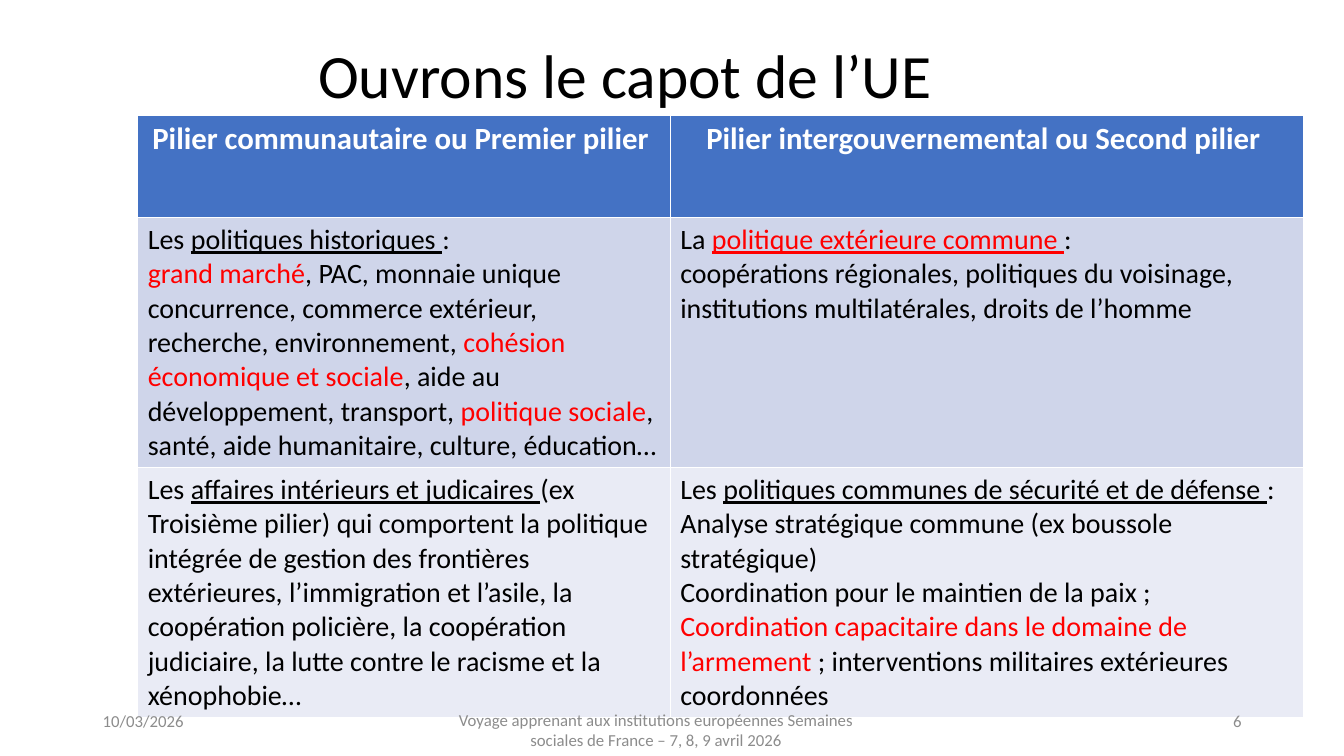
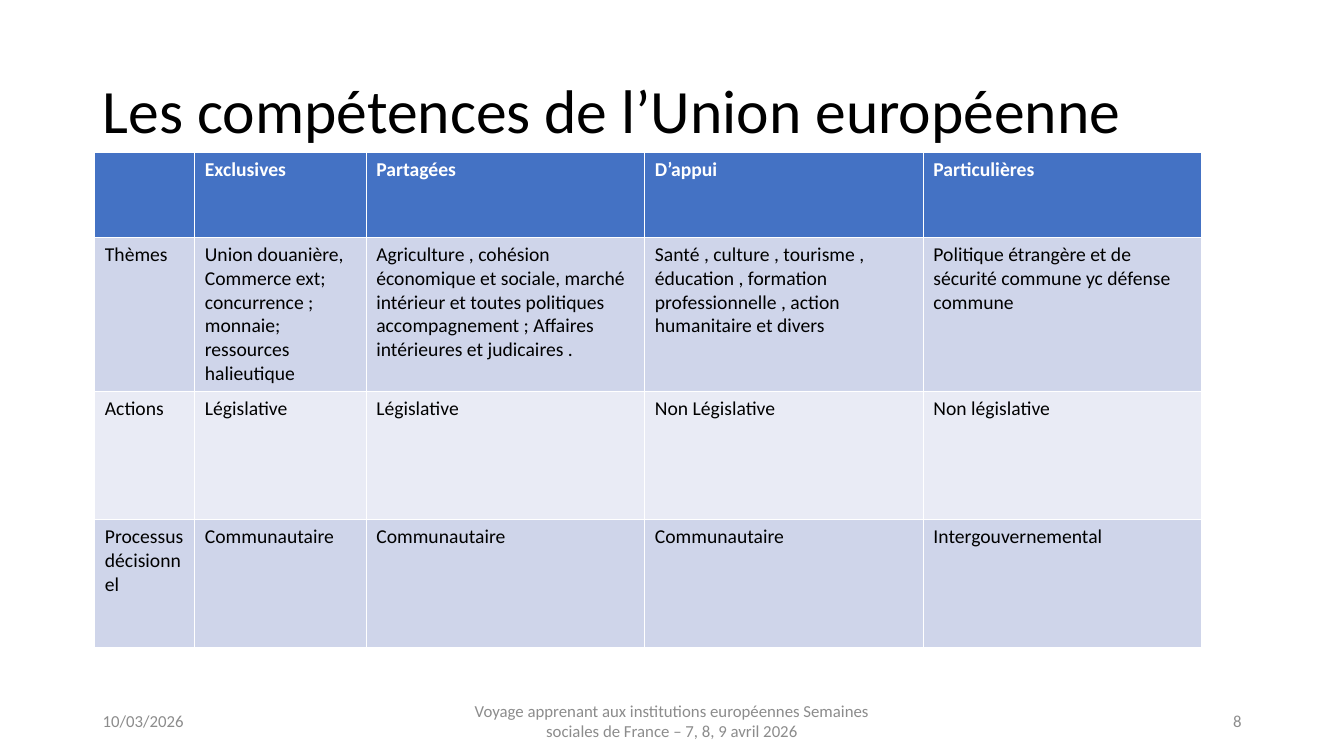
import pptx
import pptx.dml.color
import pptx.enum.text
import pptx.util

Cm = pptx.util.Cm
Pt = pptx.util.Pt
ALIGN = pptx.enum.text.PP_ALIGN
ANCHOR = pptx.enum.text.MSO_ANCHOR

FONT = "Calibri"
COLORS = {
    "black": "000000",
    "white": "FFFFFF",
    "red": "FF0000",
    "grey": "8C8C8C",
    "header": "4472C4",
    "band_dark": "CFD5EA",
    "band_light": "E9EBF5",
}
DATE = "10/03/2026"
EVENT = ("Voyage apprenant aux institutions européennes Semaines sociales "
         "de France – 7, 8, 9 avril 2026")
RED = {"color": "red"}
UNDERLINED = {"underline": True}


def rgb(name):
    return pptx.dml.color.RGBColor.from_string(COLORS[name])


def add_run(p, text, size=12, color="black", bold=False, underline=False):
    r = p.add_run()
    r.text = text
    r.font.name = FONT
    r.font.size = Pt(size)
    r.font.color.rgb = rgb(color)
    r.font.bold = bold
    r.font.underline = underline


class Deck:
    def __init__(self):
        self.prs = pptx.Presentation()
        self.prs.slide_width = Cm(33.87)
        self.prs.slide_height = Cm(19.05)
        self.s = None

    def new_slide(self):
        self.s = self.prs.slides.add_slide(self.prs.slide_layouts[6])

    def text(self, text, left, top, width, height, align=ALIGN.LEFT, spacing=1.0, **fmt):
        sp = self.s.shapes.add_textbox(Cm(left), Cm(top), Cm(width), Cm(height))
        tf = sp.text_frame
        tf.word_wrap = True
        tf.vertical_anchor = ANCHOR.MIDDLE
        p = tf.paragraphs[0]
        p.alignment = align
        p.line_spacing = spacing
        add_run(p, text, **fmt)

    def title(self, text, left=2.34, top=1.02, width=29.21):
        self.text(text, left, top, width, 3.68, spacing=0.9, size=44)

    def footer(self, number, event_left=11.22, event_top=17.65):
        self.text(DATE, 2.34, 17.65, 7.62, 1.01, color="grey")
        self.text(EVENT, event_left, event_top, 11.43, 1.01, ALIGN.CENTER, color="grey")
        self.text(number, 23.92, 17.65, 7.62, 1.01, ALIGN.RIGHT, color="grey")

    def cell(self, cell, paragraphs, fill, align, **base):
        cell.fill.solid()
        cell.fill.fore_color.rgb = rgb(fill)
        tf = cell.text_frame
        for i, runs in enumerate(paragraphs):
            p = tf.add_paragraph() if i else tf.paragraphs[0]
            p.alignment = align
            for text, fmt in runs:
                add_run(p, text, **{**base, **fmt})

    def table(self, left, top, widths, heights, rows, size, header_size, header_align=ALIGN.LEFT):
        table = self.s.shapes.add_table(
            len(heights), len(widths), Cm(left), Cm(top), Cm(sum(widths)), Cm(sum(heights))
        ).table
        for column, width in zip(table.columns, widths):
            column.width = Cm(width)
        for i, (row, height, contents) in enumerate(zip(table.rows, heights, rows)):
            row.height = Cm(height)
            for cell, content in zip(row.cells, contents):
                paragraphs = [[(content, {})]] if isinstance(content, str) else content
                if i == 0:
                    self.cell(cell, paragraphs, "header", header_align,
                              size=header_size, color="white", bold=True)
                else:
                    band = "band_dark" if i % 2 else "band_light"
                    self.cell(cell, paragraphs, band, ALIGN.LEFT, size=size)


PILLARS = [
    ["Pilier communautaire ou Premier pilier ", "Pilier intergouvernemental ou Second pilier "],
    [
        [
            [("Les ", {}), ("politiques historiques ", UNDERLINED), (":", {})],
            [
                ("grand marché", RED),
                (", PAC, monnaie unique concurrence, commerce extérieur, recherche, "
                 "environnement, ", {}),
                ("cohésion économique et sociale", RED),
                (", aide au développement, transport, ", {}),
                ("politique sociale", RED),
                (", santé, aide humanitaire, culture, éducation…", {}),
            ],
        ],
        [
            [("La ", {}), ("politique extérieure commune ", {**RED, **UNDERLINED}), (":", {})],
            [("coopérations régionales, politiques du voisinage, institutions "
              "multilatérales, droits de l’homme", {})],
        ],
    ],
    [
        [
            [
                ("Les ", {}),
                ("affaires intérieurs et judicaires ", UNDERLINED),
                ("(ex Troisième pilier) qui comportent la politique intégrée de gestion "
                 "des frontières extérieures, l’immigration et l’asile, la coopération "
                 "policière, la coopération judiciaire, la lutte contre le racisme et la "
                 "xénophobie…", {}),
            ],
        ],
        [
            [("Les ", {}), ("politiques communes de sécurité et de défense ", UNDERLINED),
             (":", {})],
            [("Analyse stratégique commune (ex boussole stratégique)", {})],
            [
                ("Coordination pour le maintien de la paix ; ", {}),
                ("Coordination capacitaire dans le domaine de l’armement ", RED),
                ("; interventions militaires extérieures coordonnées", {}),
            ],
        ],
    ],
]

COMPETENCES = [
    ["", "Exclusives", "Partagées", "D’appui", "Particulières"],
    [
        "Thèmes",
        "Union douanière, Commerce ext; concurrence ; monnaie; ressources halieutique",
        "Agriculture , cohésion économique et sociale, marché intérieur et toutes "
        "politiques accompagnement ; Affaires intérieures et judicaires .",
        "Santé , culture , tourisme , éducation , formation professionnelle , action "
        "humanitaire et divers",
        "Politique étrangère et de sécurité commune yc défense commune",
    ],
    ["Actions", "Législative", "Législative", "Non Législative", "Non législative"],
    ["Processus décisionnel"] + ["Communautaire"] * 3 + ["Intergouvernemental"],
]


def main():
    deck = Deck()

    deck.new_slide()
    deck.title("Ouvrons le capot de l’UE", left=7.77, top=0.15, width=24.13)
    deck.table(3.47, 2.9, [13.42, 15.95], [2.59, 6.3, 6.3], PILLARS,
               size=20, header_size=22, header_align=ALIGN.CENTER)
    deck.footer("6", event_left=10.82, event_top=17.88)

    deck.new_slide()
    deck.title("Les compétences de l’Union européenne")
    deck.table(2.39, 3.84, [2.52, 4.32] + [7.02] * 3, [2.15, 3.88, 3.23, 3.23], COMPETENCES,
               size=14, header_size=14)
    deck.footer("8")

    deck.prs.save("out.pptx")


if __name__ == "__main__":
    main()
